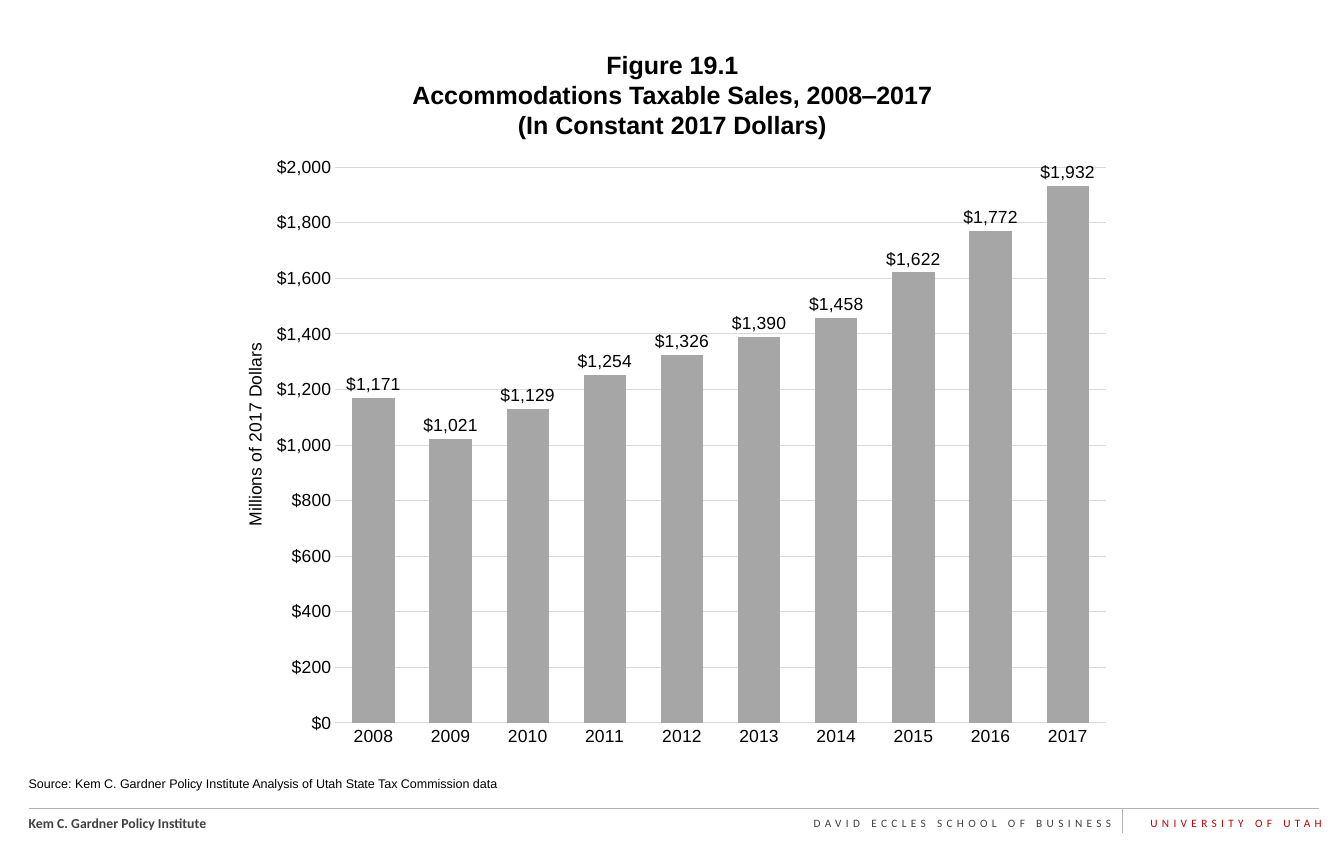
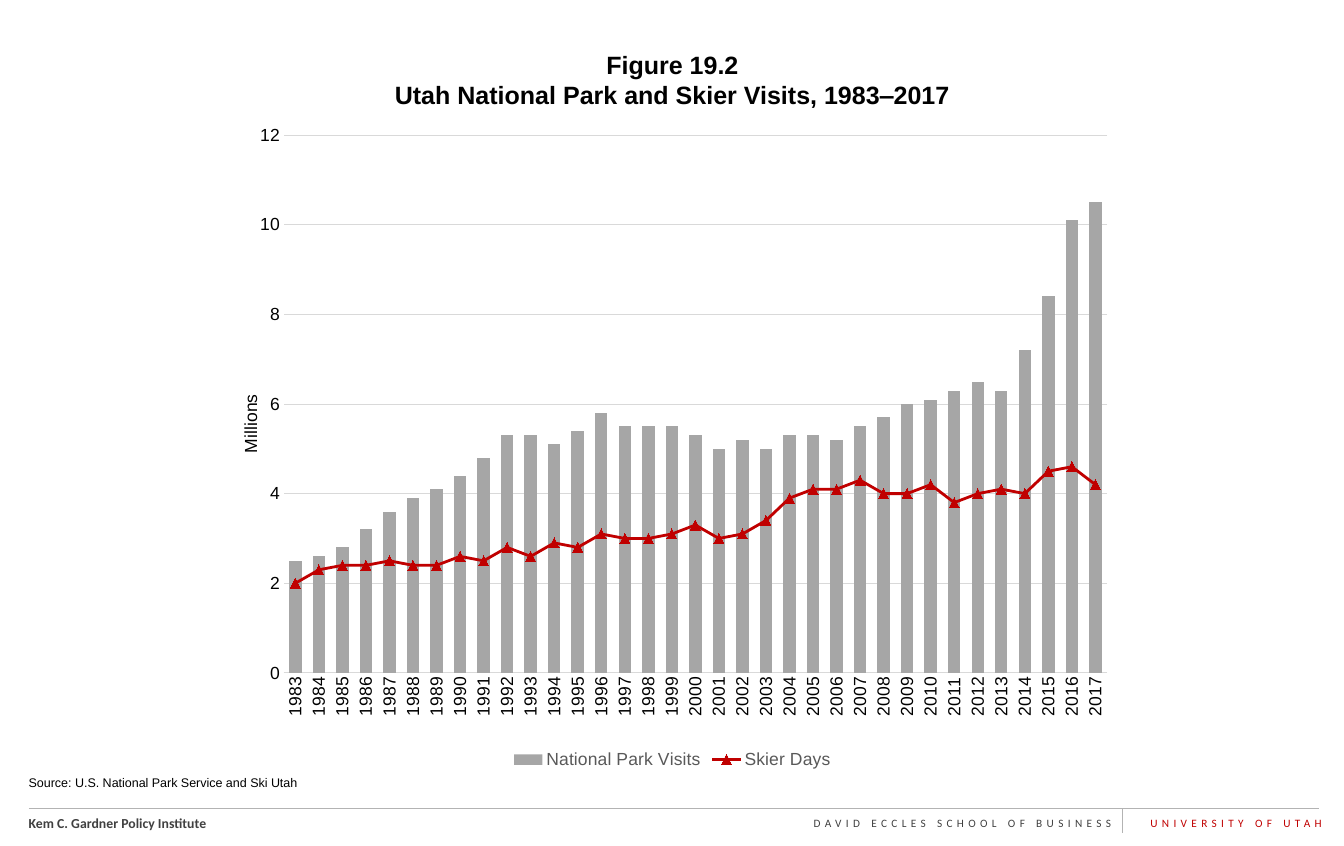
from dataclasses import dataclass
from typing import Optional

from pptx import Presentation
from pptx.chart.data import CategoryChartData
from pptx.dml.color import RGBColor
from pptx.enum.chart import (XL_CHART_TYPE, XL_LABEL_POSITION, XL_LEGEND_POSITION,
                             XL_MARKER_STYLE, XL_TICK_MARK)
from pptx.enum.shapes import MSO_CONNECTOR
from pptx.enum.text import MSO_ANCHOR, MSO_AUTO_SIZE, PP_ALIGN
from pptx.oxml import parse_xml
from pptx.oxml.ns import nsdecls, qn
from pptx.util import Inches, Pt

BLACK = RGBColor(0x00, 0x00, 0x00)
DARK_GRAY = RGBColor(0x40, 0x40, 0x40)
LEGEND_GRAY = RGBColor(0x59, 0x59, 0x59)
BAR_GRAY = RGBColor(0xA6, 0xA6, 0xA6)
RULE_GRAY = RGBColor(0xB3, 0xB3, 0xB3)
GRID_GRAY = RGBColor(0xD9, 0xD9, 0xD9)
RED = RGBColor(0xC0, 0x00, 0x00)

CLUSTERED = XL_CHART_TYPE.COLUMN_CLUSTERED
OUTSIDE_END = XL_LABEL_POSITION.OUTSIDE_END
LEGEND_BOTTOM = XL_LEGEND_POSITION.BOTTOM
TRIANGLE = XL_MARKER_STYLE.TRIANGLE
NO_TICK = XL_TICK_MARK.NONE
STRAIGHT = MSO_CONNECTOR.STRAIGHT
TOP = MSO_ANCHOR.TOP
NO_FIT = MSO_AUTO_SIZE.NONE
LEFT, CENTER, RIGHT = PP_ALIGN.LEFT, PP_ALIGN.CENTER, PP_ALIGN.RIGHT

FIGURE_LEFT, FIGURE_WIDTH, TITLE_TOP = 2.47, 10, 0.5
TITLE_ONLY = 5


@dataclass
class ChartSpec:
    top: float
    height: float
    first_year: int
    series: dict[str, list[float]]
    axis_title: str
    axis_title_at: tuple[float, float]
    plot: tuple[float, float, float, float]
    number_format: str
    maximum: float
    major_unit: float
    gap: int
    overlap: int
    labels: bool = False
    line_series: bool = False


@dataclass
class Figure:
    title: str
    source: str
    source_top: float
    chart: ChartSpec


@dataclass
class FooterText:
    text: str
    left: float
    top: float
    width: float
    size: float
    color: RGBColor
    align: PP_ALIGN
    bold: bool = False
    spacing: Optional[float] = None


FOOTER_TEXTS = [
    FooterText("Kem C. Gardner Policy Institute", 0.22, 9, 8, 11, DARK_GRAY, LEFT, bold=True),
    FooterText("DAVID ECCLES SCHOOL OF BUSINESS", 8.64, 9.02, 3.8, 9, DARK_GRAY, RIGHT, spacing=3.5),
    FooterText("UNIVERSITY OF UTAH", 12.48, 9.02, 2.3, 9, RED, RIGHT, spacing=3.5),
]
FOOTER_RULES = [(0.32, 8.98, 14.65, 8.98), (12.47, 8.98, 12.47, 9.25)]

FIGURES = [
    Figure(
        "Figure 19.1\vAccommodations Taxable Sales, 2008‒2017\v(In Constant 2017 Dollars)",
        "Source: Kem C. Gardner Policy Institute Analysis of Utah State Tax Commission data",
        8.6,
        ChartSpec(
            top=1.53, height=7, first_year=2008,
            series={"Series 1": [1171, 1021, 1129, 1254, 1326, 1390, 1458, 1622, 1772, 1932]},
            axis_title="Millions of 2017 Dollars", axis_title_at=(0.02, 0.32),
            plot=(0.125, 0.047, 0.857, 0.882), number_format='"$"#,##0',
            maximum=2000, major_unit=200, gap=82, overlap=-61, labels=True),
    ),
    Figure(
        "Figure 19.2\vUtah National Park and Skier Visits, 1983‒2017",
        "Source: U.S. National Park Service and Ski Utah",
        8.59,
        ChartSpec(
            top=1.32, height=7.27, first_year=1983,
            series={
                "National Park Visits": [
                    2.5, 2.6, 2.8, 3.2, 3.6, 3.9, 4.1, 4.4, 4.8, 5.3, 5.3, 5.1,
                    5.4, 5.8, 5.5, 5.5, 5.5, 5.3, 5, 5.2, 5, 5.3, 5.3, 5.2,
                    5.5, 5.7, 6, 6.1, 6.3, 6.5, 6.3, 7.2, 8.4, 10.1, 10.5],
                "Skier Days": [
                    2, 2.3, 2.4, 2.4, 2.5, 2.4, 2.4, 2.6, 2.5, 2.8, 2.6, 2.9,
                    2.8, 3.1, 3, 3, 3.1, 3.3, 3, 3.1, 3.4, 3.9, 4.1, 4.1,
                    4.3, 4, 4, 4.2, 3.8, 4, 4.1, 4, 4.5, 4.6, 4.2],
            },
            axis_title="Millions", axis_title_at=(0.015, 0.416),
            plot=(0.068, 0.025, 0.915, 0.822), number_format="#,##0",
            maximum=12, major_unit=2, gap=89, overlap=-27, line_series=True),
    ),
]


def style_font(font, size: float, color: RGBColor, name: str = "Arial", bold: bool = False) -> None:
    font.name = name
    font.size = Pt(size)
    font.bold = bold
    font.color.rgb = color


def style_line(line, color: RGBColor, width: float) -> None:
    line.color.rgb = color
    line.width = Pt(width)


def add_text(slide, text: str, left: float, top: float, width: float):
    sp = slide.shapes.add_textbox(Inches(left), Inches(top), Inches(width), Inches(0.25))
    tf = sp.text_frame
    tf.word_wrap = True
    tf.paragraphs[0].text = text
    return sp


def add_footer(slide) -> None:
    for item in FOOTER_TEXTS:
        sp = add_text(slide, item.text, item.left, item.top, item.width)
        p = sp.text_frame.paragraphs[0]
        p.alignment = item.align
        style_font(p.font, item.size, item.color, "Calibri", item.bold)
        if item.spacing:
            for r in sp.element.iter(qn("a:r")):
                r.get_or_add_rPr().set("spc", str(int(item.spacing * 100)))
    for ends in FOOTER_RULES:
        rule = slide.shapes.add_connector(STRAIGHT, *(Inches(v) for v in ends))
        style_line(rule.line, RULE_GRAY, 0.75)
        rule.element.spPr.append(parse_xml(f"<a:effectLst {nsdecls('a')}/>"))


def set_title(slide, text: str, height: float) -> None:
    sp = slide.shapes.title
    sp.left, sp.top = Inches(FIGURE_LEFT), Inches(TITLE_TOP)
    sp.width, sp.height = Inches(FIGURE_WIDTH), Inches(height)
    tf = sp.text_frame
    tf.word_wrap = True
    tf.auto_size = NO_FIT
    tf.vertical_anchor = TOP
    p = tf.paragraphs[0]
    p.text = text
    p.alignment = CENTER
    style_font(p.font, 20, BLACK, bold=True)


def set_layout(parent, index: int, inner: bool, **place: float) -> None:
    for old in parent.findall(qn("c:layout")):
        parent.remove(old)
    target = '<c:layoutTarget val="inner"/>' if inner else ""
    values = "".join(f'<c:{key} val="{value}"/>' for key, value in place.items())
    parent.insert(index, parse_xml(
        f'<c:layout {nsdecls("c")}><c:manualLayout>{target}<c:xMode val="edge"/>'
        f'<c:yMode val="edge"/>{values}</c:manualLayout></c:layout>'))


def turn_text(element) -> None:
    for body in element.iter(qn("a:bodyPr")):
        body.set("rot", "-5400000")
        body.set("vert", "horz")


def move_last_series_to_line(chart) -> None:
    bar = chart.element.chart.plotArea.find(qn("c:barChart"))
    ser = bar.findall(qn("c:ser"))[-1]
    for flag in ser.findall(qn("c:invertIfNegative")):
        ser.remove(flag)
    axes = "".join(f'<c:axId val="{ax.get("val")}"/>' for ax in bar.findall(qn("c:axId")))
    line = parse_xml(
        f'<c:lineChart {nsdecls("c")}><c:grouping val="standard"/><c:varyColors val="0"/>'
        f'<c:marker val="1"/>{axes}</c:lineChart>')
    line.insert(2, ser)
    bar.addnext(line)
    series = chart.plots[1].series[0]
    series.smooth = False
    style_line(series.format.line, RED, 2.25)
    marker = series.marker
    marker.style = TRIANGLE
    marker.size = 8
    marker.format.fill.solid()
    marker.format.fill.fore_color.rgb = RED
    marker.format.line.color.rgb = RED


def style_axes(chart, spec: ChartSpec) -> None:
    for axis in (chart.category_axis, chart.value_axis):
        axis.major_tick_mark = axis.minor_tick_mark = NO_TICK
        style_font(axis.tick_labels.font, 14, BLACK)
    style_line(chart.category_axis.format.line, GRID_GRAY, 0.75)
    axis = chart.value_axis
    axis.minimum_scale, axis.maximum_scale = 0, spec.maximum
    axis.major_unit = spec.major_unit
    axis.format.line.fill.background()
    style_line(axis.major_gridlines.format.line, GRID_GRAY, 0.75)
    axis.tick_labels.number_format = spec.number_format
    axis.tick_labels.number_format_is_linked = False
    title = axis.axis_title
    p = title.text_frame.paragraphs[0]
    r = p.add_run()
    r.text = spec.axis_title
    style_font(r.font, 14, BLACK)
    x, y = spec.axis_title_at
    set_layout(title.element, 1, False, x=x, y=y)
    turn_text(title.element)


def add_figure_chart(slide, spec: ChartSpec) -> None:
    data = CategoryChartData()
    count = len(next(iter(spec.series.values())))
    data.categories = [str(spec.first_year + i) for i in range(count)]
    for name, values in spec.series.items():
        data.add_series(name, values)
    chart = slide.shapes.add_chart(
        CLUSTERED, Inches(FIGURE_LEFT), Inches(spec.top),
        Inches(FIGURE_WIDTH), Inches(spec.height), data).chart
    chart.has_title = False
    chart.has_legend = spec.line_series
    style_font(chart.font, 10, BLACK)
    style_axes(chart, spec)

    plot = chart.plots[0]
    plot.vary_by_categories = False
    plot.gap_width, plot.overlap = spec.gap, spec.overlap
    bars = plot.series[0]
    bars.format.fill.solid()
    bars.format.fill.fore_color.rgb = BAR_GRAY
    if spec.labels:
        plot.has_data_labels = True
        labels = plot.data_labels
        labels.show_value = True
        labels.position = OUTSIDE_END
        labels.number_format = spec.number_format
        labels.number_format_is_linked = False
        style_font(labels.font, 14, BLACK)

    area = chart.element.chart.plotArea
    if spec.line_series:
        move_last_series_to_line(chart)
        turn_text(area.find(qn("c:catAx")))
        chart.legend.position = LEGEND_BOTTOM
        chart.legend.include_in_layout = False
        style_font(chart.legend.font, 14, LEGEND_GRAY)
    x, y, w, h = spec.plot
    set_layout(area, 0, True, x=x, y=y, w=w, h=h)


def build_figure(prs, figure: Figure) -> None:
    slide = prs.slides.add_slide(prs.slide_layouts[TITLE_ONLY])
    add_footer(slide)
    set_title(slide, figure.title, figure.chart.top - TITLE_TOP)
    sp = add_text(slide, figure.source, 0.22, figure.source_top, 6.39)
    p = sp.text_frame.paragraphs[0]
    p.line_spacing = 0.8
    style_font(p.font, 10, BLACK)
    add_figure_chart(slide, figure.chart)


def main() -> None:
    prs = Presentation()
    prs.slide_width, prs.slide_height = Inches(14.93), Inches(9.4)
    for figure in FIGURES:
        build_figure(prs, figure)
    prs.save("out.pptx")


if __name__ == "__main__":
    main()
